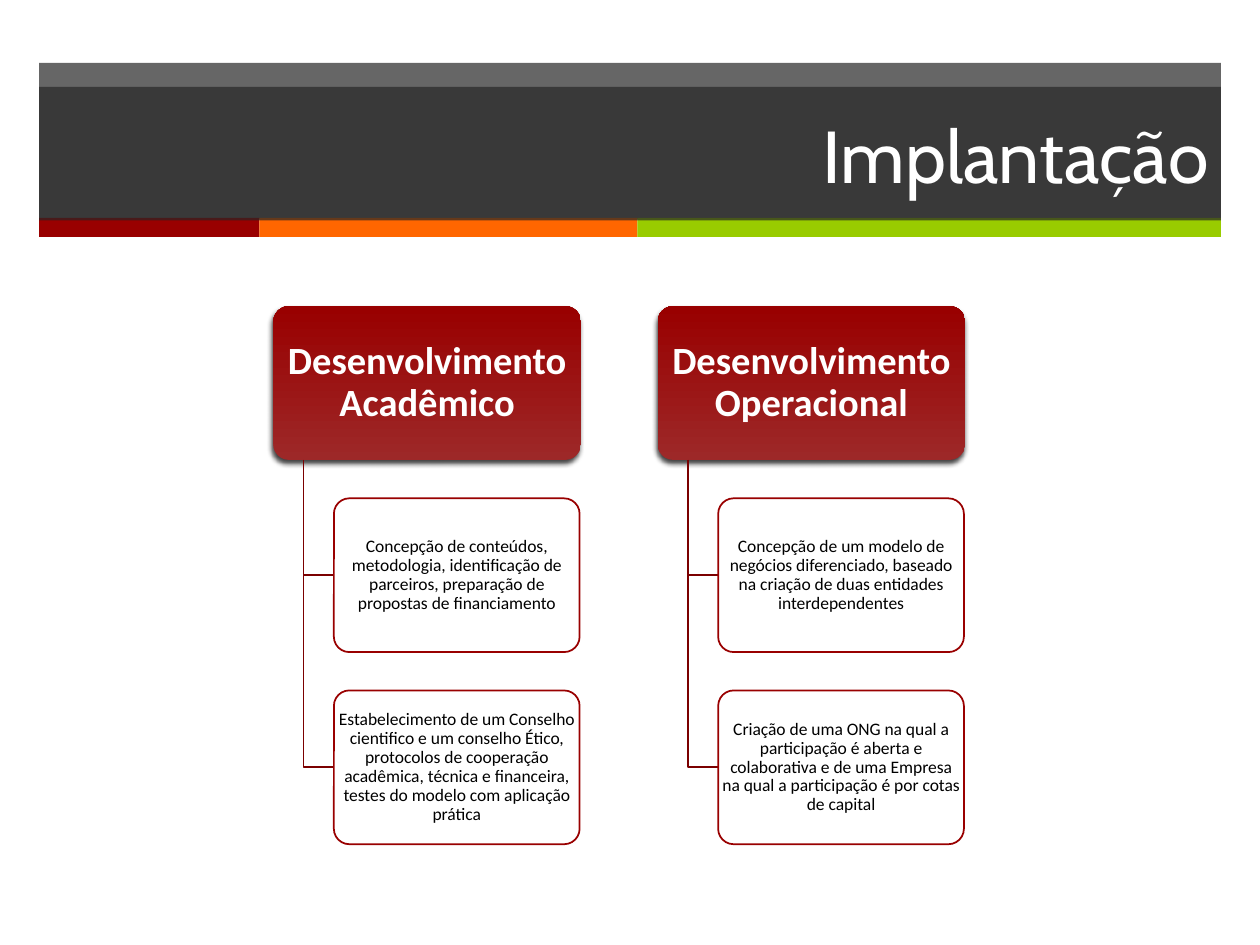
from lxml.etree import SubElement
from pptx import Presentation
from pptx.dml.color import RGBColor
from pptx.enum.shapes import MSO_SHAPE as SHAPE
from pptx.enum.text import MSO_ANCHOR as ANCHOR, PP_ALIGN as ALIGN
from pptx.oxml.ns import qn
from pptx.util import Inches, Pt

COLORS = {
    "band": "262626", "red": "990000", "orange": "FF6600", "green": "99CC00",
    "soft_red": "9D2828", "branch": "7B0000", "white": "FFFFFF", "black": "000000",
}
COLUMNS = [
    ("Desenvolvimento Acadêmico", [
        "Concepção de conteúdos, metodologia, identificação de parceiros, "
        "preparação de propostas de financiamento",
        "Estabelecimento de um Conselho cientifico e um conselho Ético, "
        "protocolos de cooperação acadêmica, técnica e financeira, "
        "testes do modelo com aplicação prática",
    ]),
    ("Desenvolvimento Operacional", [
        "Concepção de um modelo de negócios diferenciado, baseado na criação "
        "de duas entidades interdependentes",
        "Criação de uma ONG na qual a participação é aberta e colaborativa e de "
        "uma Empresa na qual a participação é por cotas de capital",
    ]),
]


def add_block(kind, left, top, width, height, color=None, opacity=100):
    """Add a borderless shape, filled with a see-through colour if one is named."""
    block = page.shapes.add_shape(
        kind, Inches(left), Inches(top), Inches(width), Inches(height))
    block.shadow.inherit = False
    block.line.fill.background()
    if color:
        block.fill.solid()
        block.fill.fore_color.rgb = RGBColor.from_string(COLORS[color])
        if opacity < 100:
            tint = block.fill._xPr.find(".//" + qn("a:srgbClr"))
            SubElement(tint, qn("a:alpha"), val=str(opacity * 1000))
    if kind == SHAPE.ROUNDED_RECTANGLE:
        block.adjustments[0] = 0.1
    return block


def write(box, text, font, size, color, align=ALIGN.CENTER, spacing=0.9, insets=None):
    frame = box.text_frame
    frame.word_wrap = True
    frame.vertical_anchor = ANCHOR.MIDDLE
    if insets:
        frame.margin_left = frame.margin_right = Inches(insets[0])
        frame.margin_top = frame.margin_bottom = Inches(insets[1])
    para = frame.paragraphs[0]
    para.text = text
    para.alignment = align
    para.line_spacing = spacing
    para.font.name = font
    para.font.size = Pt(size)
    para.font.color.rgb = RGBColor.from_string(COLORS[color])
    return para


deck = Presentation()
deck.slide_width, deck.slide_height = Inches(10), Inches(7.5)
page = deck.slides.add_slide(deck.slide_layouts[6])

# Title band with its coloured strip
add_block(SHAPE.RECTANGLE, 0.31, 0.5, 9.38, 1.24, "band", 70)
strip_left = 0.31
for color, width in [("red", 1.75), ("orange", 3), ("green", 4.63)]:
    add_block(SHAPE.RECTANGLE, strip_left, 1.73, width, 0.15, color)
    strip_left += width
title = add_block(SHAPE.RECTANGLE, 0.31, 0.69, 9.38, 1.06, "band", 70)
write(title, "Implantação", "Cabin", 42, "white", ALIGN.RIGHT, 1.0)

# Two hierarchies: a heading with cards branching off below it
HEAD_TOP, HEAD_WIDTH, BOX_HEIGHT = 2.43, 2.44, 1.22
CARD_WIDTH, INDENT, ROW_STEP, COLUMN_STEP = 1.95, 0.24, 1.525, 3.05

for column, (heading, cards) in enumerate(COLUMNS):
    left = 2.17 + column * COLUMN_STEP
    head_area = (left, HEAD_TOP, HEAD_WIDTH, BOX_HEIGHT)
    head = add_block(SHAPE.ROUNDED_RECTANGLE, *head_area)
    head.fill.gradient()
    head.fill.gradient_angle = 90
    for stop, color, position in zip(head.fill.gradient_stops, ("soft_red", "red"), (0, 1)):
        stop.color.rgb = RGBColor.from_string(COLORS[color])
        stop.position = position
    effects = head._element.spPr.find(qn("a:effectLst"))
    shadow = SubElement(effects, qn("a:outerShdw"), blurRad=str(Pt(3)), dist=str(Pt(2)),
                        dir=str(110 * 60000), rotWithShape="0")
    shade = SubElement(shadow, qn("a:srgbClr"), val=COLORS["black"])
    SubElement(shade, qn("a:alpha"), val="75000")
    label = page.shapes.add_textbox(*map(Inches, head_area))
    write(label, heading, "Calibri", 22, "white", insets=(0.05, 0.03)).font.bold = True

    trunk = left + INDENT
    card_left = trunk + INDENT
    for row, text in enumerate(cards, start=1):
        card_top = HEAD_TOP + row * ROW_STEP
        card_middle = card_top + BOX_HEIGHT / 2
        builder = page.shapes.build_freeform(Inches(trunk), Inches(HEAD_TOP + BOX_HEIGHT))
        builder.add_line_segments(
            [(Inches(trunk), Inches(card_middle)), (Inches(card_left), Inches(card_middle))],
            close=False)
        branch = builder.convert_to_shape()
        branch.shadow.inherit = False
        branch.fill.background()
        branch.line.color.rgb = RGBColor.from_string(COLORS["branch"])
        branch.line.width = Pt(1)

        card_area = (card_left, card_top, CARD_WIDTH, BOX_HEIGHT)
        card = add_block(SHAPE.ROUNDED_RECTANGLE, *card_area, "white", 90)
        card.line.color.rgb = RGBColor.from_string(COLORS["red"])
        card.line.width = Pt(1)
        label = page.shapes.add_textbox(*map(Inches, card_area))
        write(label, text, "Calibri", 10, "black", insets=(0.02, 0.01))

deck.save("out.pptx")
